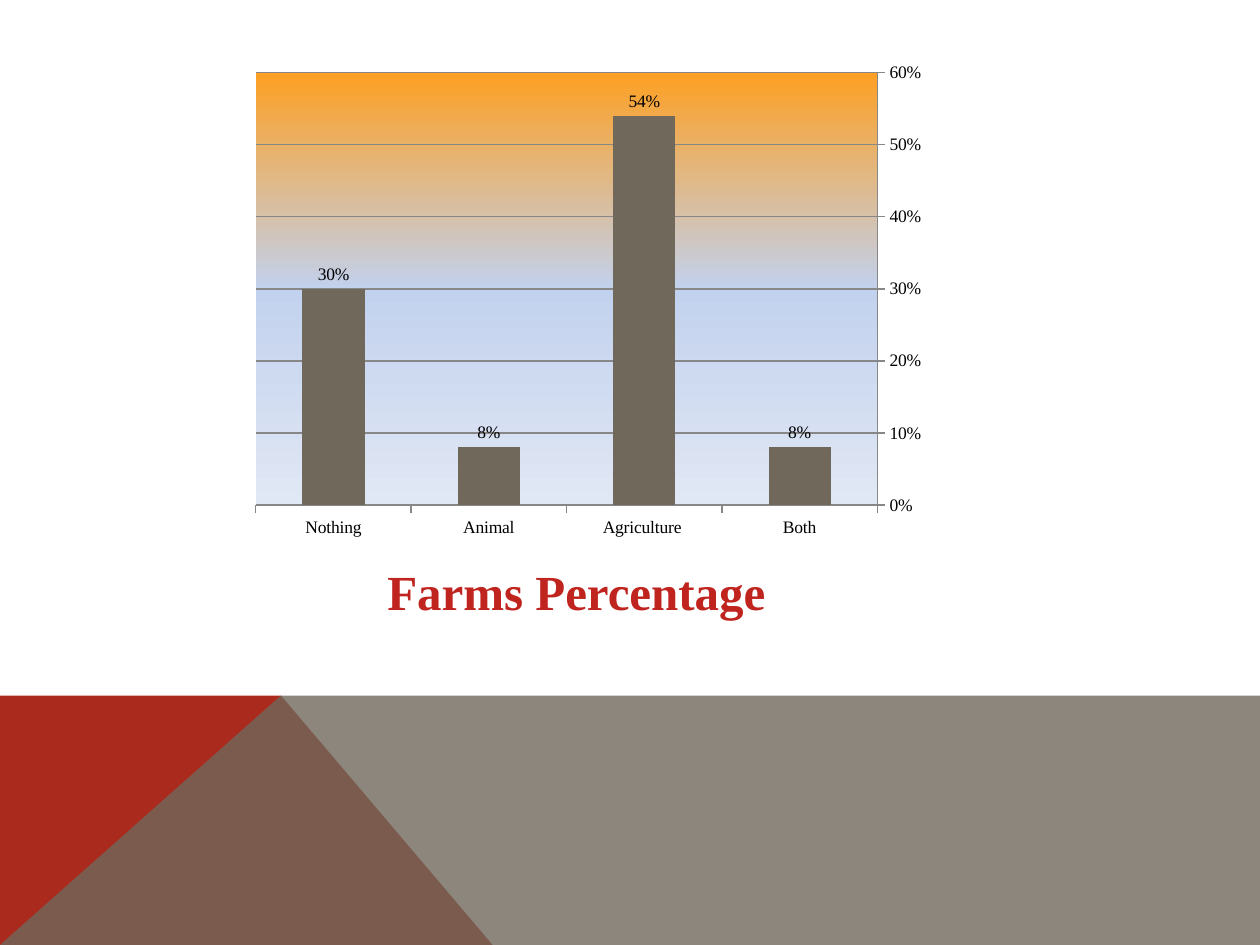
from lxml import etree
from pptx import Presentation
from pptx.chart.data import CategoryChartData
from pptx.dml.color import RGBColor
from pptx.enum.chart import XL_CHART_TYPE, XL_LABEL_POSITION, XL_TICK_MARK
from pptx.enum.text import MSO_ANCHOR, MSO_AUTO_SIZE, PP_ALIGN
from pptx.oxml import parse_xml
from pptx.oxml.ns import nsdecls, qn
from pptx.util import Inches, Pt

COLUMN = XL_CHART_TYPE.COLUMN_CLUSTERED
ABOVE = XL_LABEL_POSITION.OUTSIDE_END
TICK_OUT, TICK_NONE = XL_TICK_MARK.OUTSIDE, XL_TICK_MARK.NONE
MIDDLE, CENTER, NO_FIT = MSO_ANCHOR.MIDDLE, PP_ALIGN.CENTER, MSO_AUTO_SIZE.NONE

WIDTH, HEIGHT = Inches(10), Inches(7.5)
FONT = "Times New Roman"
COLORS = {"red": "AA2B1E", "taupe": "71685C", "title": "C0241E",
          "text": "000000", "line": "878787"}
SKY = [(0, "FDA023"), (50, "C2D1ED"), (100, "E1E8F5")]
FARMS = {"Both": 0.08, "Agriculture ": 0.54, "Animal": 0.08, "Nothing": 0.3}

# Boxes are left, top, width, height as shares of the slide
BAND = (0, 0.736, 1, 0.264)
CHART = (0.192, 0.056, 0.55, 0.523)
TITLE = (0.296, 0.587, 0.323, 0.076)
PEAK, FOOT = 0.223, 0.391  # shares of the band's width


def color(name):
    return RGBColor.from_string(COLORS[name])


def scale(box):
    left, top, width, height = box
    return (round(left * WIDTH), round(top * HEIGHT),
            round(width * WIDTH), round(height * HEIGHT))


def add_facet(slide, box, points, name, alpha=100):
    """Draw a polygon whose points are shares of the box."""
    left, top, width, height = scale(box)
    spots = [(round(left + x * width), round(top + y * height))
             for x, y in points]
    pen = slide.shapes.build_freeform(*spots[0])
    pen.add_line_segments(spots[1:], close=True)
    facet = pen.convert_to_shape()
    facet.shadow.inherit = False
    facet.fill.solid()
    facet.fill.fore_color.rgb = color(name)
    facet.line.fill.background()
    if alpha < 100:
        tone = facet.fill._xPr.find(".//" + qn("a:srgbClr"))
        etree.SubElement(tone, qn("a:alpha")).set("val", str(alpha * 1000))


def add_band(slide, box):
    add_facet(slide, box, [(0, 1), (0, 0), (PEAK, 0), (FOOT, 1)], "red")
    add_facet(slide, box, [(0, 1), (PEAK, 0), (1, 0), (1, 1)], "taupe", 80)


def fill_plot(chart):
    """Give the plot area a downward gradient."""
    stops = "".join(f'<a:gs pos="{at * 1000}"><a:srgbClr val="{tone}"/></a:gs>'
                    for at, tone in SKY)
    chart._chartSpace.chart.plotArea.append(parse_xml(
        f'<c:spPr {nsdecls("c", "a")}><a:gradFill><a:gsLst>{stops}</a:gsLst>'
        '<a:lin ang="5400000" scaled="0"/></a:gradFill></c:spPr>'))


def add_graph(slide, box):
    data = CategoryChartData(number_format="0%")
    data.categories = list(FARMS)
    data.add_series("Series 1", list(FARMS.values()))
    chart = slide.shapes.add_chart(COLUMN, *scale(box), data).chart
    chart.has_title = chart.has_legend = False
    chart.font.name, chart.font.size = FONT, Pt(10)
    chart.font.color.rgb = color("text")

    cats, vals = chart.category_axis, chart.value_axis
    cats.reverse_order = True
    vals.has_major_gridlines = True
    vals.minimum_scale, vals.maximum_scale, vals.major_unit = 0, 0.6, 0.1
    vals.tick_labels.number_format = "0%"
    vals.tick_labels.number_format_is_linked = False
    for axis in (cats, vals):
        axis.major_tick_mark, axis.minor_tick_mark = TICK_OUT, TICK_NONE
    for part in (cats, vals, vals.major_gridlines):
        part.format.line.color.rgb = color("line")
        part.format.line.width = Pt(0.75)

    plot = chart.plots[0]
    plot.gap_width, plot.vary_by_categories = 150, False
    bars = plot.series[0].format.fill
    bars.solid()
    bars.fore_color.rgb = color("taupe")
    plot.has_data_labels = True
    labels = plot.data_labels
    labels.show_value, labels.position = True, ABOVE
    labels.number_format, labels.number_format_is_linked = "0%", False
    fill_plot(chart)


def add_title(slide, box):
    frame = slide.shapes.add_textbox(*scale(box)).text_frame
    frame.word_wrap, frame.auto_size = False, NO_FIT
    frame.vertical_anchor = MIDDLE
    frame.text = "Farms Percentage"
    line = frame.paragraphs[0]
    line.alignment = CENTER
    font = line.runs[0].font
    font.name, font.size, font.bold = FONT, Pt(28), True
    font.color.rgb = color("title")


def main():
    deck = Presentation()
    deck.slide_width, deck.slide_height = WIDTH, HEIGHT
    slide = deck.slides.add_slide(deck.slide_layouts[6])
    add_band(slide, BAND)
    add_graph(slide, CHART)
    add_title(slide, TITLE)
    deck.save("out.pptx")


if __name__ == "__main__":
    main()
